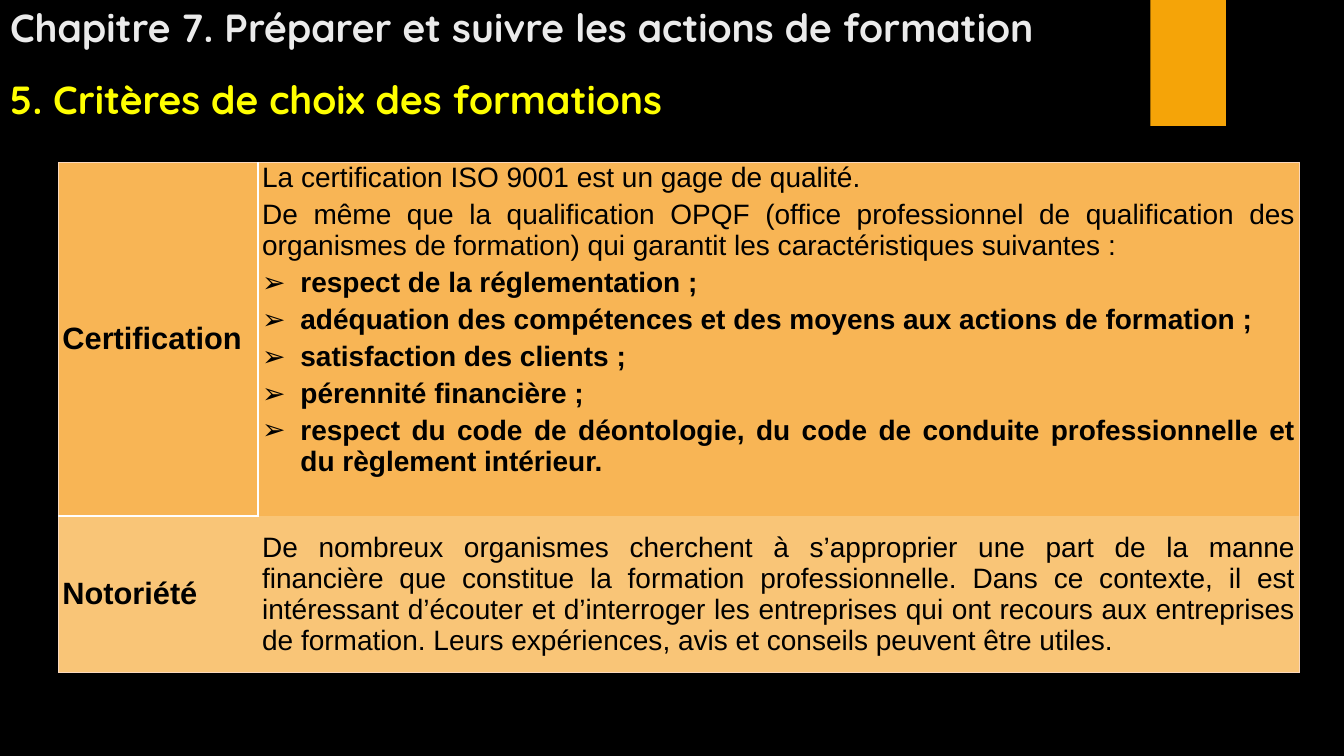
from pptx import Presentation
from pptx.dml.color import RGBColor
from pptx.enum.shapes import MSO_SHAPE
from pptx.enum.text import MSO_ANCHOR, MSO_AUTO_SIZE, PP_ALIGN
from pptx.oxml.xmlchemy import OxmlElement
from pptx.util import Inches, Pt


def rgb(value):
    return RGBColor.from_string(value)


def sub(parent, tag, **attrs):
    """Append a DrawingML child element with the given attributes."""
    el = OxmlElement(tag)
    for name, value in attrs.items():
        el.set(name, str(value))
    parent.append(el)
    return el


def write(p, text, size=20, color="000000", font="Arial", bold=False,
          align=PP_ALIGN.JUSTIFY, before=0, after=0, bullet=None):
    """Fill one paragraph with formatted text, bulleted if asked."""
    p.alignment = align
    p.space_before, p.space_after = Pt(before), Pt(after)
    if bullet:
        pPr = p._p.get_or_add_pPr()
        indent = Inches(0.38)
        pPr.set("marL", str(indent))
        pPr.set("indent", str(-indent))
        sub(pPr, "a:buFont", typeface=font)
        sub(pPr, "a:buChar", char=bullet)
    r = p.add_run()
    r.text = text
    r.font.size, r.font.bold, r.font.name = Pt(size), bold, font
    r.font.color.rgb = rgb(color)


class Deck:
    HEADING = "Quicksand"
    EDGE = ("FAD8BD", 0.75)
    SIDE = ("FFFFFF", 1.5)
    RULE = ("FFFFFF", 2.25)

    def __init__(self):
        self.prs = Presentation()
        self.prs.slide_width, self.prs.slide_height = Inches(13.33), Inches(7.5)
        self.slide = self.prs.slides.add_slide(self.prs.slide_layouts[5])
        fill = self.slide.background.fill
        fill.solid()
        fill.fore_color.rgb = rgb("000000")

    def heading(self, sp, text, top, height, color):
        sp.left, sp.top = Inches(0), Inches(top)
        sp.width, sp.height = Inches(12.9), Inches(height)
        tf = sp.text_frame
        tf.word_wrap = True
        tf.auto_size = MSO_AUTO_SIZE.NONE
        tf.vertical_anchor = MSO_ANCHOR.BOTTOM
        write(tf.paragraphs[0], text, size=28, color=color,
              font=self.HEADING, bold=True, align=PP_ALIGN.LEFT)

    def title(self, text):
        self.heading(self.slide.shapes.title, text, 0, 0.55, "EBEBEB")

    def subtitle(self, text):
        sp = self.slide.shapes.add_textbox(0, 0, 0, 0)
        self.heading(sp, text, 0.55, 0.71, "FFFF00")

    def block(self, left, top, width, height, color):
        sp = self.slide.shapes.add_shape(
            MSO_SHAPE.RECTANGLE, Inches(left), Inches(top),
            Inches(width), Inches(height))
        sp.shadow.inherit = False
        sp.fill.solid()
        sp.fill.fore_color.rgb = rgb(color)
        sp.line.fill.background()

    def table(self, left, top, widths, heights):
        table = self.slide.shapes.add_table(
            len(heights), len(widths), Inches(left), Inches(top),
            Inches(sum(widths)), Inches(sum(heights))).table
        table.first_row = table.horz_banding = False
        for col, width in zip(table.columns, widths):
            col.width = Inches(width)
        for row, height in zip(table.rows, heights):
            row.height = Inches(height)
        return table

    def cell(self, cell, paragraphs, color, borders, anchor=MSO_ANCHOR.MIDDLE):
        """Style a cell; borders maps L, R, T, B to (colour, points)."""
        cell.margin_left = cell.margin_right = Inches(0.04)
        cell.margin_top = cell.margin_bottom = 0
        cell.vertical_anchor = anchor
        tcPr = cell._tc.get_or_add_tcPr()
        for side in "LRTB":
            if side in borders:
                line_color, width = borders[side]
                ln = sub(tcPr, f"a:ln{side}", w=Pt(width))
                sub(sub(ln, "a:solidFill"), "a:srgbClr", val=line_color)
            else:
                sub(sub(tcPr, f"a:ln{side}", w=0), "a:noFill")
        cell.fill.solid()
        cell.fill.fore_color.rgb = rgb(color)
        tf = cell.text_frame
        for i, (text, style) in enumerate(paragraphs):
            p = tf.add_paragraph() if i else tf.paragraphs[0]
            write(p, text, before=2 if i else 0, after=2, **style)


def main():
    deck = Deck()
    deck.block(11.41, 0, 0.75, 1.25, "F5A408")
    deck.title("Chapitre 7. Préparer et suivre les actions de formation")
    deck.subtitle("5. Critères de choix des formations")

    label = {"size": 22, "bold": True}
    item = {"bold": True, "bullet": "➢"}
    certification = [
        ("La certification ISO 9001 est un gage de qualité.", {}),
        ("De même que la qualification OPQF (office professionnel de "
         "qualification des organismes de formation) qui garantit les "
         "caractéristiques suivantes :", {}),
        ("respect de la réglementation ;", item),
        ("adéquation des compétences et des moyens aux actions de formation ;",
         item),
        ("satisfaction des clients ;", item),
        ("pérennité financière ;", item),
        ("respect du code de déontologie, du code de conduite professionnelle "
         "et du règlement intérieur.", item),
    ]
    notoriete = [
        ("De nombreux organismes cherchent à s’approprier une part de la manne "
         "financière que constitue la formation professionnelle. Dans ce "
         "contexte, il est intéressant d’écouter et d’interroger les "
         "entreprises qui ont recours aux entreprises de formation. Leurs "
         "expériences, avis et conseils peuvent être utiles.", {}),
    ]
    edge, side, rule = deck.EDGE, deck.SIDE, deck.RULE
    dark, light = "F8B555", "F9C577"
    table = deck.table(0.58, 1.61, [1.98, 10.33], [3.51, 1.55])
    deck.cell(table.cell(0, 0), [("Certification", label)], dark,
              {"L": edge, "T": edge, "R": side, "B": rule})
    deck.cell(table.cell(0, 1), certification, dark,
              {"L": side, "T": edge, "R": edge}, MSO_ANCHOR.TOP)
    deck.cell(table.cell(1, 0), [("Notoriété", label)], light,
              {"L": edge, "T": rule, "B": edge})
    deck.cell(table.cell(1, 1), notoriete, light, {"R": edge, "B": edge})
    deck.prs.save("out.pptx")


if __name__ == "__main__":
    main()
